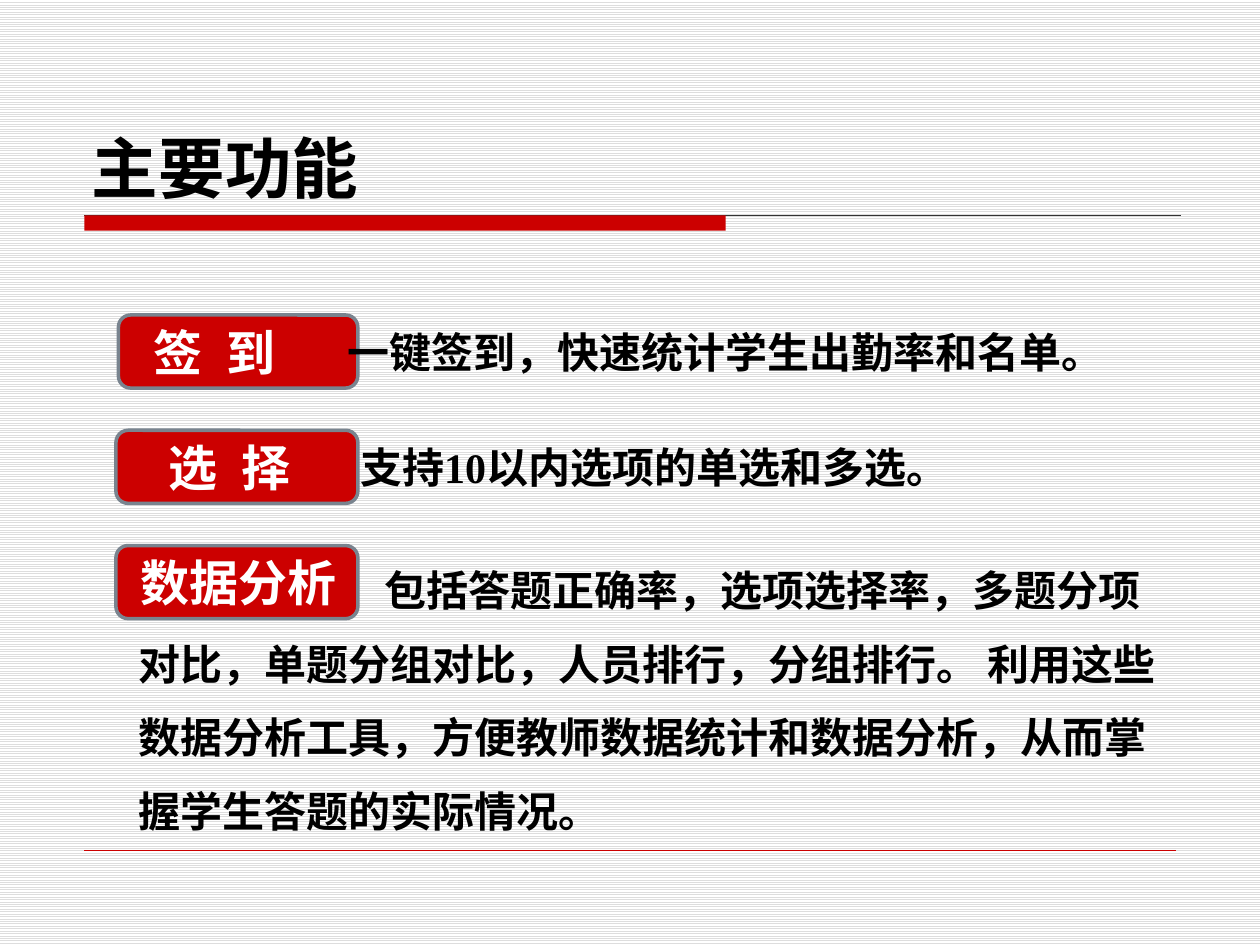
import pptx
import pptx.dml.color
import pptx.enum.dml
import pptx.enum.shapes
import pptx.enum.text
import pptx.oxml
import pptx.oxml.ns
import pptx.util

HUES = {"red": "CC0000", "edge": "79848F", "dark": "333333", "ink": "000000",
        "white": "FFFFFF", "band": "DDDDDD"}
CJK = "Noto Sans CJK SC"
COLS, ROWS = 100, 75
SHAPES = pptx.enum.shapes.MSO_SHAPE
ANCHOR = pptx.enum.text.MSO_ANCHOR


def hue(name):
    return pptx.dml.color.RGBColor.from_string(HUES[name])


def write(par, text, size=24, color="ink", font=CJK, gap=0):
    """Add a bold run; gap is extra letter spacing in points."""
    run = par.add_run()
    run.text = text
    face = run.font
    face.size, face.bold, face.name = pptx.util.Pt(size), True, font
    face.color.rgb = hue(color)
    props = run._r.get_or_add_rPr()
    if gap:
        props.set("spc", str(int(gap * 100)))
    east = pptx.oxml.parse_xml(
        f'<a:ea {pptx.oxml.ns.nsdecls("a")} typeface="{CJK}"/>')
    props.find(pptx.oxml.ns.qn("a:latin")).addnext(east)


class Page:
    """Holds the deck and the current slide; lengths are in grid cells."""

    def __init__(self):
        self.deck = pptx.Presentation()
        self.deck.slide_width = pptx.util.Inches(10)
        self.deck.slide_height = pptx.util.Inches(7.5)
        self.slide = self.deck.slides.add_slide(self.deck.slide_layouts[5])
        self.shapes = self.slide.shapes
        fill = self.slide.background.fill
        fill.patterned()
        fill.pattern = pptx.enum.dml.MSO_PATTERN.LIGHT_HORIZONTAL
        fill.fore_color.rgb, fill.back_color.rgb = hue("band"), hue("white")

    def across(self, cols):
        return int(self.deck.slide_width * cols / COLS)

    def down(self, rows):
        return int(self.deck.slide_height * rows / ROWS)

    def area(self, x, y, w, h):
        return self.across(x), self.down(y), self.across(w), self.down(h)

    def title(self, text, *area):
        box = self.shapes.title
        box.left, box.top, box.width, box.height = self.area(*area)
        frame = box.text_frame
        frame.vertical_anchor = ANCHOR.BOTTOM
        par = frame.paragraphs[0]
        par.alignment = pptx.enum.text.PP_ALIGN.LEFT
        write(par, text, size=38, font="DejaVu Sans")

    def rule(self, x, y, end, color, weight):
        line = self.shapes.add_connector(
            pptx.enum.shapes.MSO_CONNECTOR.STRAIGHT, self.across(x),
            self.down(y), self.across(end), self.down(y))
        line.line.color.rgb = hue(color)
        line.line.width = pptx.util.Pt(weight)
        line._element.spPr.append(pptx.oxml.parse_xml(
            f'<a:effectLst {pptx.oxml.ns.nsdecls("a")}/>'))

    def block(self, kind, *area, edge=None):
        box = self.shapes.add_shape(kind, *self.area(*area))
        box.shadow.inherit = False
        box.fill.solid()
        box.fill.fore_color.rgb = hue("red")
        if edge:
            box.line.color.rgb = hue(edge)
            box.line.width = pptx.util.Pt(2)
        else:
            box.line.fill.background()
        return box

    def badge(self, text, *area, inset, gap=0):
        box = self.block(SHAPES.ROUNDED_RECTANGLE, *area, edge="edge")
        frame = box.text_frame
        frame.margin_left, frame.margin_right = self.across(inset), 0
        frame.margin_top = frame.margin_bottom = 0
        frame.vertical_anchor = ANCHOR.MIDDLE
        par = frame.paragraphs[0]
        par.alignment = pptx.enum.text.PP_ALIGN.LEFT
        write(par, text, size=28, color="white", gap=gap)

    def note(self, parts, *area, anchor=ANCHOR.MIDDLE, indent=0, lead=None):
        """Add body text; parts are (text, font) pairs."""
        frame = self.shapes.add_textbox(*self.area(*area)).text_frame
        frame.word_wrap = True
        frame.vertical_anchor = anchor
        par = frame.paragraphs[0]
        if indent:
            par._p.get_or_add_pPr().set("indent", str(self.across(indent)))
        if lead:
            par.line_spacing = pptx.util.Pt(lead)
        for text, font in parts:
            write(par, text, font=font)


def main():
    page = Page()
    page.title("主要功能", 6.3, 3.3, 87.5, 13.6)
    page.rule(6.7, 17.1, 93.7, "dark", 0.75)
    page.block(SHAPES.RECTANGLE, 6.7, 17.1, 50.9, 1.2)
    page.rule(6.7, 67.5, 93.3, "red", 0.25)

    high, step, right = 5.8, 9.15, 28.4
    badges = [("签 到", 9.4, 2.5, 3.7), ("选 择", 9.2, 3.9, 3.7),
              ("数据分析", 9.2, 1.7, 0)]
    for row, (text, left, inset, gap) in enumerate(badges):
        page.badge(text, left, 25 + row * step, right - left, high,
                   inset=inset, gap=gap)

    page.note([("一键签到，快速统计学生出勤率和名单。", CJK)],
              26.6, 25, 68, high)
    page.note([("支持", CJK), ("10", "Times New Roman"),
               ("以内选项的单选和多选。", CJK)],
              27.6, 25 + step, 67, high)
    page.note([("包括答题正确率，选项选择率，多题分项对比，单题分组对比，"
                "人员排行，分组排行。 利用这些数据分析工具，方便教师数据统计"
                "和数据分析，从而掌握学生答题的实际情况。", CJK)],
              10, 42.5, 84.2, 24.6, anchor=ANCHOR.TOP, indent=19.5, lead=42)
    page.deck.save("out.pptx")


if __name__ == "__main__":
    main()
